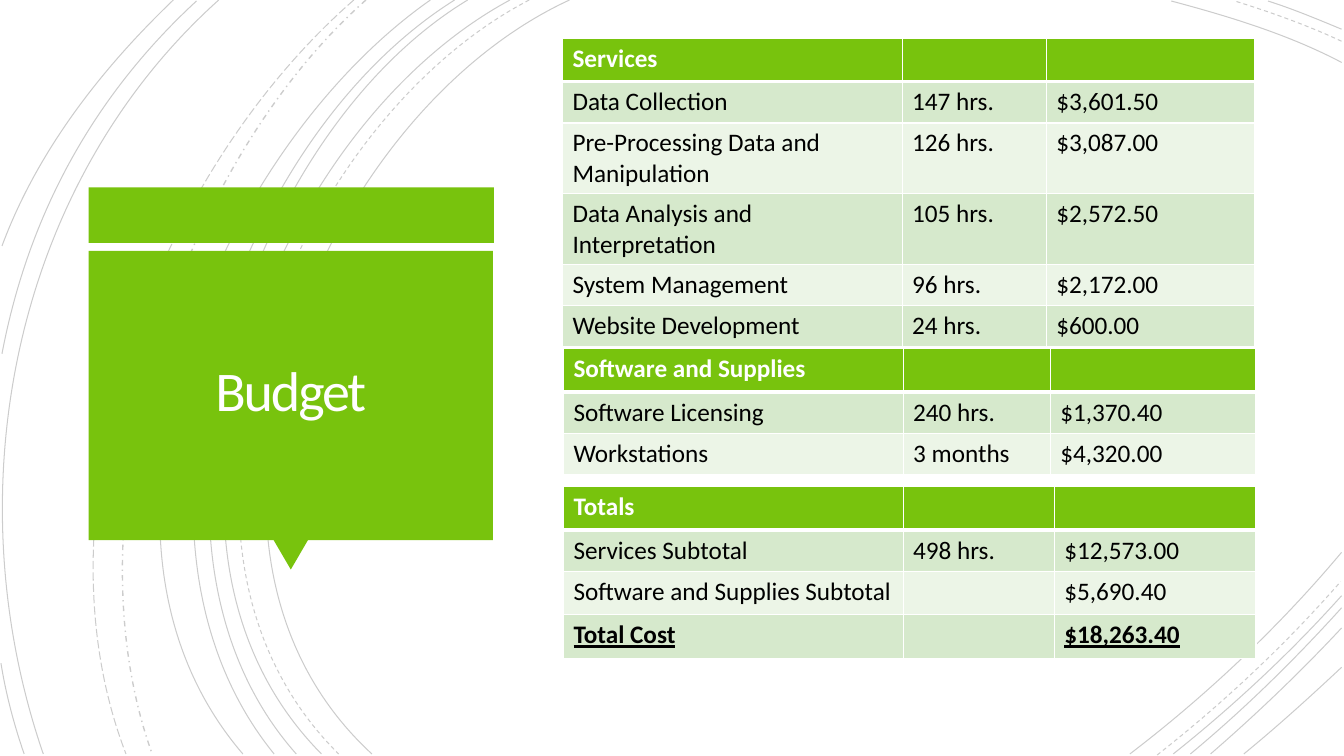
from dataclasses import dataclass

from lxml.etree import SubElement
from pptx import Presentation
from pptx.dml.color import RGBColor
from pptx.enum.dml import MSO_LINE
from pptx.enum.shapes import MSO_SHAPE
from pptx.enum.text import MSO_ANCHOR, PP_ALIGN
from pptx.oxml import parse_xml
from pptx.oxml.ns import nsdecls, qn
from pptx.slide import Slide
from pptx.util import Pt

PX = 9144
FONT = "Calibri"
GREEN = RGBColor(0x78, 0xC3, 0x0D)
BAND_DARK = RGBColor(0xD6, 0xE9, 0xCC)
BAND_LIGHT = RGBColor(0xEC, 0xF5, 0xE7)
BLACK = RGBColor(0, 0, 0)
WHITE = RGBColor(0xFF, 0xFF, 0xFF)
TITLE_WHITE = RGBColor(0xFF, 0xFE, 0xFF)
FULL_ROW, GAPPED_ROW = 41, 43


@dataclass
class Arc:
    points: tuple[int, ...]
    dash: MSO_LINE = MSO_LINE.SOLID
    width: float = 0.75


@dataclass
class Block:
    shape: MSO_SHAPE
    box: tuple[int, int, int, int]
    rotation: int = 0


@dataclass
class CostTable:
    left: int
    top: int
    columns: tuple[int, ...]
    rows: tuple[tuple[str, str, str], ...]
    has_total: bool = False


ARCS = (
    Arc((565, 0, 315, 115, 143, 540, 369, 748)),
    Arc((1331, 62, 1278, 34, 1218, 16, 1162, 1)),
    Arc((1121, 748, 1197, 690, 1269, 622, 1331, 548)),
    Arc((525, 0, 285, 125, 123, 537, 336, 748), MSO_LINE.DASH),
    Arc((1331, 41, 1297, 25, 1260, 12, 1225, 1), MSO_LINE.DASH),
    Arc((1148, 749, 1213, 698, 1275, 640, 1330, 577), MSO_LINE.DASH),
    Arc((506, 0, 270, 127, 110, 537, 319, 748)),
    Arc((1331, 29, 1307, 19, 1283, 9, 1258, 1)),
    Arc((1164, 748, 1223, 701, 1280, 648, 1331, 591)),
    Arc((464, 0, 244, 133, 110, 541, 294, 748)),
    Arc((1181, 748, 1234, 704, 1284, 655, 1331, 603)),
    Arc((451, 0, 231, 138, 97, 533, 272, 748)),
    Arc((1201, 748, 1246, 709, 1290, 667, 1331, 623)),
    Arc((427, 0, 217, 147, 53, 529, 241, 748)),
    Arc((1234, 748, 1267, 721, 1299, 692, 1331, 662)),
    Arc((363, 0, 176, 166, 65, 509, 151, 748), MSO_LINE.DASH_DOT, 1),
    Arc((351, 0, 157, 169, 29, 499, 125, 748), MSO_LINE.LONG_DASH),
    Arc((217, 0, 11, 185, -46, 490, 43, 748)),
    Arc((195, 1, 92, 96, 28, 214, 2, 351)),
    Arc((1, 658, 6, 689, 14, 719, 24, 748)),
    Arc((172, 0, 100, 69, 37, 150, 2, 244)),
)
BLOCKS = (
    Block(MSO_SHAPE.RECTANGLE, (88, 186, 402, 55)),
    Block(MSO_SHAPE.ISOSCELES_TRIANGLE, (271, 535, 35, 30), 180),
    Block(MSO_SHAPE.RECTANGLE, (88, 249, 401, 287)),
)
TABLES = (
    CostTable(558, 38, (337, 143, 207), (
        ("Services", "", ""),
        ("Data Collection", "147 hrs.", "$3,601.50"),
        ("Pre-Processing Data and Manipulation", "126 hrs.", "$3,087.00"),
        ("Data Analysis and Interpretation", "105 hrs.", "$2,572.50"),
        ("System Management", "96 hrs.", "$2,172.00"),
        ("Website Development", "24 hrs.", "$600.00"),
    )),
    CostTable(559, 346, (337, 146, 204), (
        ("Software and Supplies", "", ""),
        ("Software Licensing", "240 hrs.", "$1,370.40"),
        ("Workstations", "3 months", "$4,320.00"),
    )),
    CostTable(559, 483, (337, 150, 200), (
        ("Totals", "", ""),
        ("Services Subtotal", "498 hrs.", "$12,573.00"),
        ("Software and Supplies Subtotal", "", "$5,690.40"),
        ("Total Cost", "", "$18,263.40"),
    ), True),
)


def add_text(p, text: str, color: RGBColor, **fmt):
    r = p.add_run()
    r.text = text
    for name, value in {"name": FONT, **fmt}.items():
        setattr(r.font, name, value)
    r.font.color.rgb = color
    return r


def draw_arc(s: Slide, arc: Arc) -> None:
    start, *rest = zip(arc.points[::2], arc.points[1::2])
    builder = s.shapes.build_freeform(*start, scale=PX)
    builder.add_line_segments(rest, close=False)
    sp = builder.convert_to_shape()
    outline = sp.element.xpath(".//a:path")[0]
    curve = SubElement(outline, qn("a:cubicBezTo"))
    for line_to in outline.findall(qn("a:lnTo")):
        curve.append(line_to[0])
        outline.remove(line_to)
    sp.shadow.inherit = False
    sp.fill.background()
    sp.line.color.rgb = BLACK
    sp.line.width = Pt(arc.width)
    sp.line.dash_style = arc.dash
    color = sp.element.xpath(".//a:ln/a:solidFill/a:srgbClr")[0]
    SubElement(color, qn("a:alpha"), val="20000")


def draw_block(s: Slide, block: Block) -> None:
    sp = s.shapes.add_shape(block.shape, *(v * PX for v in block.box))
    sp.rotation = block.rotation
    sp.shadow.inherit = False
    sp.fill.solid()
    sp.fill.fore_color.rgb = GREEN
    sp.line.fill.background()


def draw_title(s: Slide) -> None:
    tf = s.shapes.add_textbox(*(v * PX for v in (97, 257, 383, 269))).text_frame
    tf.word_wrap = True
    tf.vertical_anchor = MSO_ANCHOR.MIDDLE
    for side in ("left", "top", "right", "bottom"):
        setattr(tf, f"margin_{side}", 25 * PX)
    p = tf.paragraphs[0]
    p.alignment = PP_ALIGN.CENTER
    p.line_spacing = 0.85
    r = add_text(p, "Budget", TITLE_WHITE, size=Pt(40))
    r.font._element.set("spc", "-150")


def set_borders(cell, row: int) -> None:
    widths = {"L": 1, "R": 1, "T": 3 if row == 1 else 1, "B": 3 if row == 0 else 1}
    for i, (side, width) in enumerate(widths.items()):
        ln = parse_xml(f'<a:ln{side} {nsdecls("a")} w="{Pt(width)}"><a:solidFill>'
                       f'<a:srgbClr val="{WHITE}"/></a:solidFill></a:ln{side}>')
        cell._tc.get_or_add_tcPr().insert(i, ln)


def draw_table(s: Slide, costs: CostTable) -> None:
    heights = [GAPPED_ROW if "" in texts else FULL_ROW for texts in costs.rows]
    box = (costs.left, costs.top, sum(costs.columns), sum(heights))
    frame = s.shapes.add_table(len(costs.rows), len(costs.columns), *(v * PX for v in box))
    table = frame.table
    for column, width in zip(table.columns, costs.columns):
        column.width = width * PX
    for i, (texts, height) in enumerate(zip(costs.rows, heights)):
        table.rows[i].height = height * PX
        header = i == 0
        total = costs.has_total and i == len(costs.rows) - 1
        for j, text in enumerate(texts):
            cell = table.cell(i, j)
            cell.fill.solid()
            cell.fill.fore_color.rgb = GREEN if header else BAND_DARK if i % 2 else BAND_LIGHT
            set_borders(cell, i)
            if text:
                add_text(cell.text_frame.paragraphs[0], text, WHITE if header else BLACK,
                         size=Pt(18), bold=header or total, underline=total)


def main() -> None:
    """Build the budget slide with its title block and three cost tables."""
    prs = Presentation()
    prs.slide_height = 750 * PX
    prs.slide_width = prs.slide_height * 16 // 9
    s = prs.slides.add_slide(prs.slide_layouts[6])
    for arc in ARCS:
        draw_arc(s, arc)
    for block in BLOCKS:
        draw_block(s, block)
    draw_title(s)
    for costs in TABLES:
        draw_table(s, costs)
    prs.save("out.pptx")


if __name__ == "__main__":
    main()
